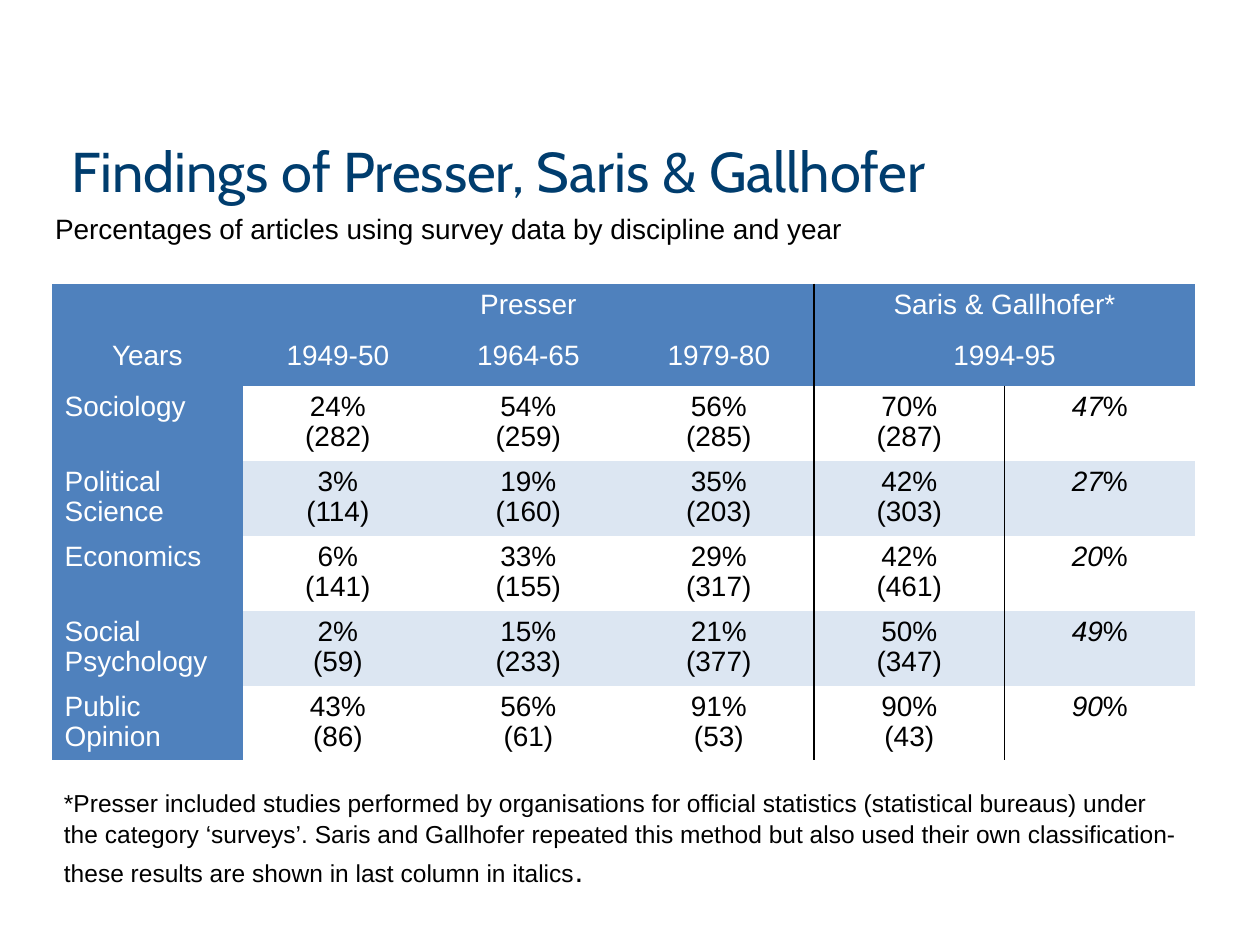
"""Build a slide with a table of survey use by discipline and year."""
from lxml import etree
from pptx import Presentation
from pptx import util as u
from pptx.dml.color import RGBColor
from pptx.enum import text
from pptx.oxml.ns import qn

TITLE = "Findings of Presser, Saris & Gallhofer"
SUBTITLE = "Percentages of articles using survey data by discipline and year"
FOOTNOTE = (
    "*Presser included studies performed by organisations for official statistics "
    "(statistical bureaus) under the category ‘surveys’. Saris and Gallhofer repeated "
    "this method but also used their own classification- these results are shown in "
    "last column in italics"
)
HEADINGS = [
    ["", "Presser", "", "", "Saris & Gallhofer*", ""],
    ["Years", "1949-50", "1964-65", "1979-80", "1994-95", ""],
]
FINDINGS = [
    ["Sociology", "24%\n(282)", "54%\n(259)", "56%\n(285)", "70%\n(287)", "47%"],
    ["Political Science", "3%\n(114)", "19%\n(160)", "35%\n(203)", "42%\n(303)", "27%"],
    ["Economics", "6%\n(141)", "33%\n(155)", "29%\n(317)", "42%\n(461)", "20%"],
    ["Social Psychology", "2%\n(59)", "15%\n(233)", "21%\n(377)", "50%\n(347)", "49%"],
    ["Public Opinion", "43%\n(86)", "56%\n(61)", "91%\n(53)", "90%\n(43)", "90%"],
]
SPANS = [(0, 1, 3), (0, 4, 5), (1, 4, 5)]
OWN_CLASSIFICATION = 5
SARIS_START = 4

THEME = {
    "navy": "003D6E", "header": "4F81BD", "band": "DCE6F2",
    "black": "000000", "white": "FFFFFF",
    "heading_font": "Cabin", "body_font": "Arial",
    "title": 32, "body": 16, "note": 14, "stop": 18,
}
PLACES = {
    "title": (1.19, 2.62, 23.04, 2.21),
    "subtitle": (0.86, 4.14, 23.37, 0.94),
    "findings": (1.05, 5.72, 23.04, 9.61),
    "footnote": (1.04, 15.72, 23.14, 2.24),
}
HEADING_HEIGHT, FINDING_HEIGHT = 1.03, 1.51
PLAIN_STYLE = "{2D5ABB26-0587-4C30-8999-92F81FD0307C}"


def place(name):
    return [u.Cm(length) for length in PLACES[name]]


def add_run(paragraph, wording, size="body", color="black", face="body_font", italic=False):
    run = paragraph.add_run()
    run.text = wording
    formats = {"size": u.Pt(THEME[size]), "name": THEME[face], "italic": italic, "bold": False}
    for attribute, value in formats.items():
        setattr(run.font, attribute, value)
    run.font.color.rgb = RGBColor.from_string(THEME[color])


def format_frame(frame):
    formats = {"word_wrap": True, "vertical_anchor": text.MSO_ANCHOR.TOP,
               "auto_size": text.MSO_AUTO_SIZE.NONE}
    for attribute, value in formats.items():
        setattr(frame, attribute, value)


def add_left_line(cell):
    line = etree.Element(qn("a:lnL"), w=str(u.Pt(1)))
    fill = etree.SubElement(line, qn("a:solidFill"))
    etree.SubElement(fill, qn("a:srgbClr"), val=THEME["black"])
    cell._tc.get_or_add_tcPr().insert(0, line)


def fill_cell(cell, wording, row, column):
    body_row = row - len(HEADINGS)
    heading = body_row < 0 or column == 0
    shade = "header" if heading else "band" if body_row % 2 else None
    if shade:
        cell.fill.solid()
        cell.fill.fore_color.rgb = RGBColor.from_string(THEME[shade])
    else:
        cell.fill.background()
    if column == SARIS_START or (column == OWN_CLASSIFICATION and body_row >= 0):
        add_left_line(cell)
    if not wording:
        return
    color = "white" if heading else "black"
    left = column == 0 and body_row >= 0
    for index, entry in enumerate(wording.split("\n")):
        paragraph = cell.text_frame.paragraphs[0] if index == 0 else cell.text_frame.add_paragraph()
        paragraph.alignment = text.PP_ALIGN.LEFT if left else text.PP_ALIGN.CENTER
        paragraph.line_spacing = 0.97
        if column == OWN_CLASSIFICATION:
            add_run(paragraph, entry.rstrip("%"), color=color, italic=True)
            entry = "%"
        add_run(paragraph, entry, color=color)


def add_findings(slide):
    rows = HEADINGS + FINDINGS
    findings = slide.shapes.add_table(len(rows), len(rows[0]), *place("findings")).table
    for flag in ("first_row", "horz_banding"):
        setattr(findings, flag, False)
    findings._tbl.tblPr.find(qn("a:tableStyleId")).text = PLAIN_STYLE
    for column in findings.columns:
        column.width = u.Cm(PLACES["findings"][2] / len(rows[0]))
    for row, entries in enumerate(rows):
        height = HEADING_HEIGHT if row < len(HEADINGS) else FINDING_HEIGHT
        findings.rows[row].height = u.Cm(height)
        for column, wording in enumerate(entries):
            fill_cell(findings.cell(row, column), wording, row, column)
    for row, first, last in SPANS:
        findings.cell(row, first).merge(findings.cell(row, last))


def add_text(slide, name):
    frame = slide.shapes.add_textbox(*place(name)).text_frame
    format_frame(frame)
    return frame.paragraphs[0]


def main():
    deck = Presentation()
    deck.slide_width, deck.slide_height = u.Cm(25.4), u.Cm(19.05)
    slide = deck.slides.add_slide(deck.slide_layouts[5])

    add_findings(slide)
    add_run(add_text(slide, "subtitle"), SUBTITLE)
    footnote = add_text(slide, "footnote")
    footnote.line_spacing = 1.07
    add_run(footnote, FOOTNOTE, "note")
    add_run(footnote, ".", "stop")

    title = slide.shapes.title
    for side, length in zip(("left", "top", "width", "height"), place("title")):
        setattr(title, side, length)
    format_frame(title.text_frame)
    heading = title.text_frame.paragraphs[0]
    heading.alignment = text.PP_ALIGN.LEFT
    add_run(heading, TITLE, "title", "navy", "heading_font")

    deck.save("out.pptx")


if __name__ == "__main__":
    main()
